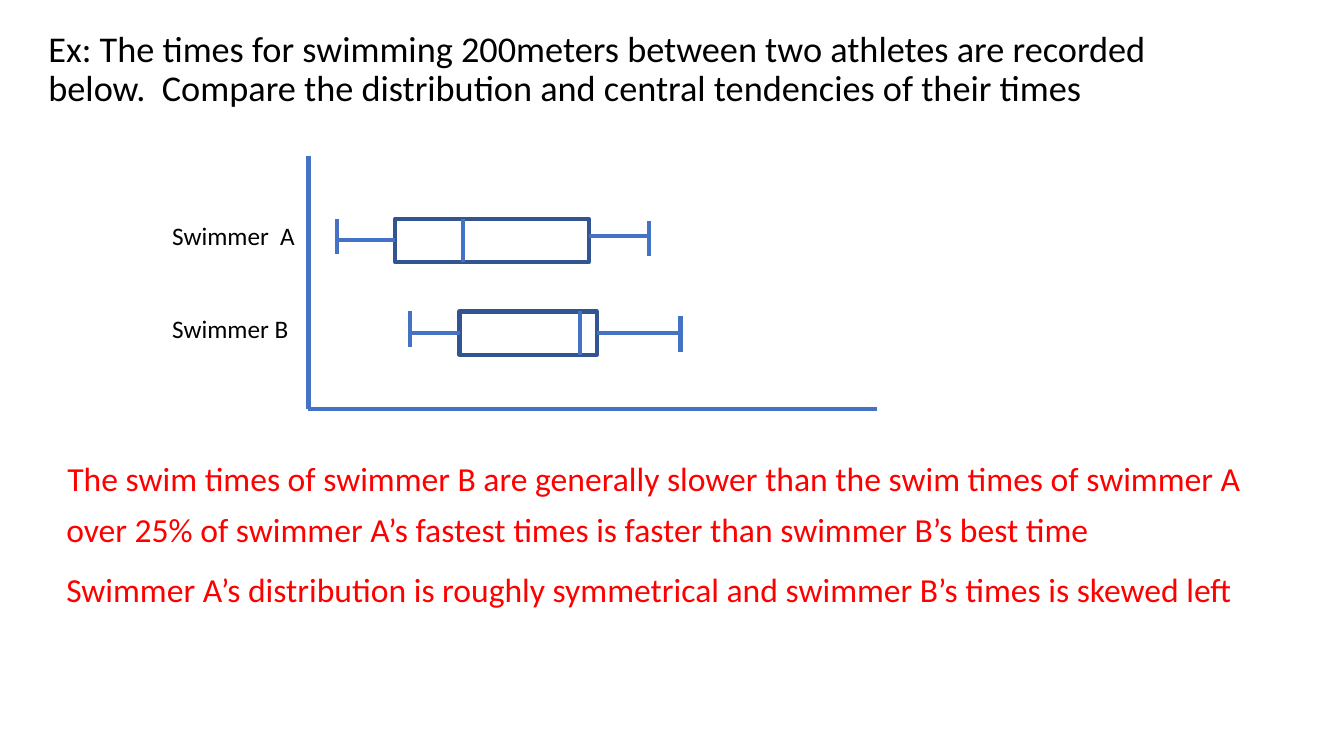
import pptx
import pptx.util
import pptx.dml.color
import pptx.enum.shapes
import pptx.enum.text
import pptx.oxml
import pptx.oxml.ns

BLUE = pptx.dml.color.RGBColor(0x44, 0x72, 0xC4)
NAVY = pptx.dml.color.RGBColor(0x32, 0x54, 0x91)
BLACK = pptx.dml.color.RGBColor(0, 0, 0)
RED = pptx.dml.color.RGBColor(0xFF, 0, 0)
CELL = pptx.util.Inches(0.1)
COLS, ROWS = 133.33, 75

prs = pptx.Presentation()
prs.slide_width, prs.slide_height = int(COLS * CELL), ROWS * CELL
s = prs.slides.add_slide(prs.slide_layouts[1])
s.shapes.title.element.getparent().remove(s.shapes.title.element)


def add_line(shapes, *ends):
    x1, y1, x2, y2 = [round(v * CELL) for v in ends]
    cx = shapes.add_connector(pptx.enum.shapes.MSO_CONNECTOR.STRAIGHT, x1, y1, x2, y2)
    cx.line.color.rgb = BLUE
    cx.line.width = pptx.util.Pt(3)
    cx.element.spPr.append(pptx.oxml.parse_xml(
        '<a:effectLst %s/>' % pptx.oxml.ns.nsdecls('a')))
    return cx


def write(sp, at, text, size, color):
    sp.left, sp.top, sp.width, sp.height = [round(v * CELL) for v in at]
    tf = sp.text_frame
    tf.word_wrap = True
    p = tf.paragraphs[0]
    r = p.add_run()
    r.text = text
    r.font.name = 'Calibri'
    r.font.size = pptx.util.Pt(size)
    r.font.color.rgb = color
    return tf


BOX_H, CAP_H = 4.3, 3.5
swimmers = [
    ('Swimmer  A', 21.7, 33.4, 39.2, 45.9, 58.4, 64.4, 0.2, 23.4),
    ('Swimmer B', 30.9, 40.7, 45.6, 57.5, 59.2, 67.5, 0.5, None),
]
for name, top, low, q1, median, q3, high, cap_drop, high_y in swimmers:
    middle = top + BOX_H / 2
    g = s.shapes.add_group_shape().shapes
    box = g.add_shape(pptx.enum.shapes.MSO_SHAPE.RECTANGLE, round(q1 * CELL),
                      round(top * CELL), round((q3 - q1) * CELL), round(BOX_H * CELL))
    box.shadow.inherit = False
    box.fill.background()
    box.line.color.rgb = NAVY
    box.line.width = pptx.util.Pt(3)
    add_line(g, median, top, median, top + BOX_H)
    add_line(g, low, middle, q1, middle).end_connect(box, 1)
    whisker_y = high_y or middle
    whisker = add_line(g, q3, whisker_y, high, whisker_y)
    if high_y is None:
        whisker.begin_connect(box, 3)
    for x, y in [(low, top), (high, top + cap_drop)]:
        add_line(g, x, y, x, y + CAP_H)
    write(s.shapes.add_textbox(0, 0, 0, 0), (16.1, top - 0.3, 14.8, 4), name, 18, BLACK)

for end_x, end_y in [(87, 40.6), (30.6, 15.5)]:
    add_line(s.shapes, 30.6, 40.6, end_x, end_y)

tf = write(s.placeholders[1], (3.8, 2.6, 118.8, 12.2),
           'Ex: The times for swimming 200meters between two athletes are recorded '
           'below.  Compare the distribution and central tendencies of their times',
           25.9, BLACK)
tf.auto_size = pptx.enum.text.MSO_AUTO_SIZE.NONE
p = tf.paragraphs[0]
p.line_spacing = 0.9
p.space_before = pptx.util.Pt(10)
pPr = p._p.get_or_add_pPr()
pPr.set('marL', '0')
pPr.set('indent', '0')
pPr.append(pptx.oxml.parse_xml('<a:buNone %s/>' % pptx.oxml.ns.nsdecls('a')))

findings = [
    (5.7, 44.9, 'The swim times of swimmer B are generally slower than the swim times of swimmer A'),
    (5.6, 50, 'over 25% of swimmer A’s fastest times is faster than swimmer B’s best time'),
    (5.6, 55.9, 'Swimmer A’s distribution is roughly symmetrical and swimmer B’s times is skewed left'),
]
for x, y, text in findings:
    write(s.shapes.add_textbox(0, 0, 0, 0), (x, y, 120.3, 5), text, 24, RED)

prs.save("out.pptx")
